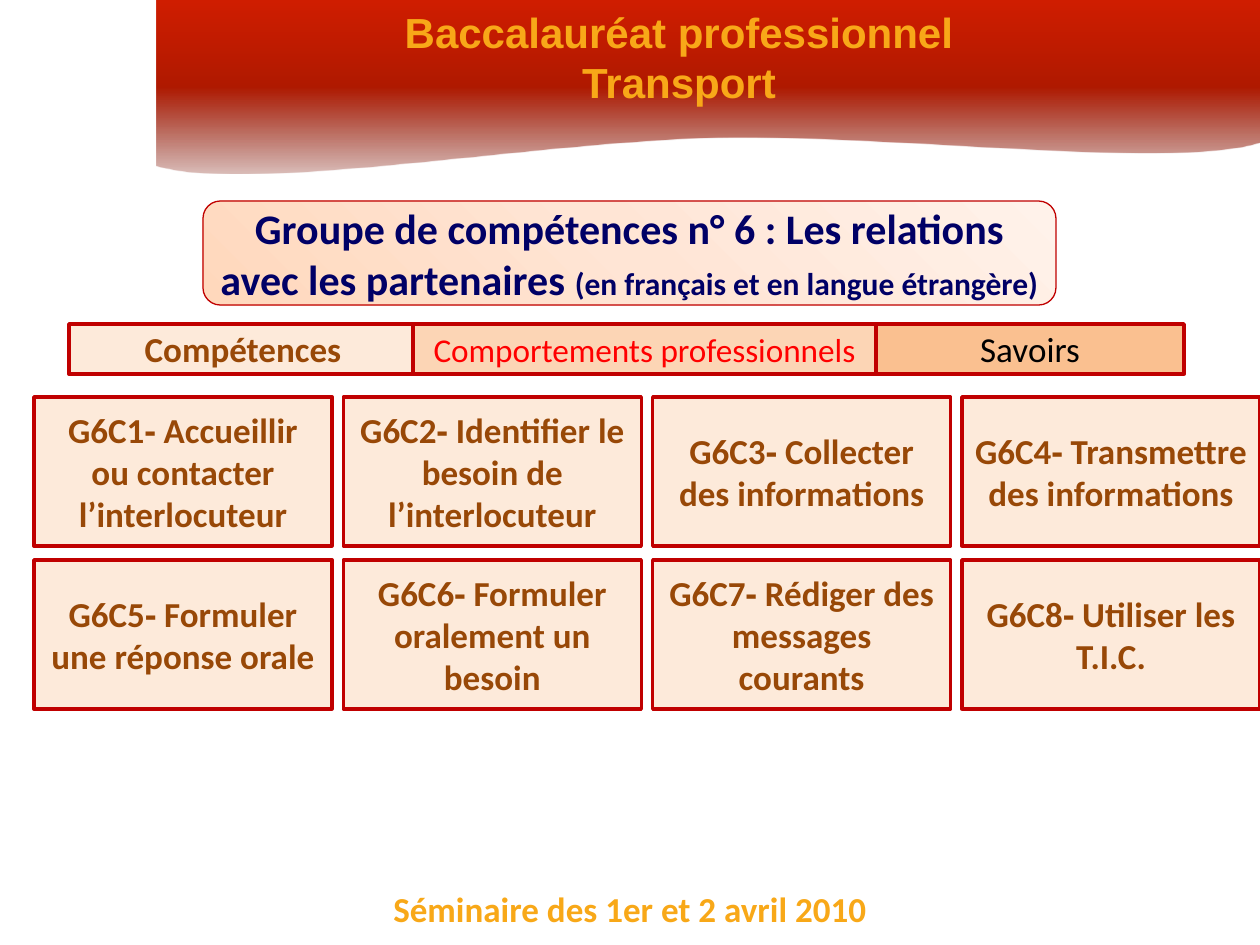
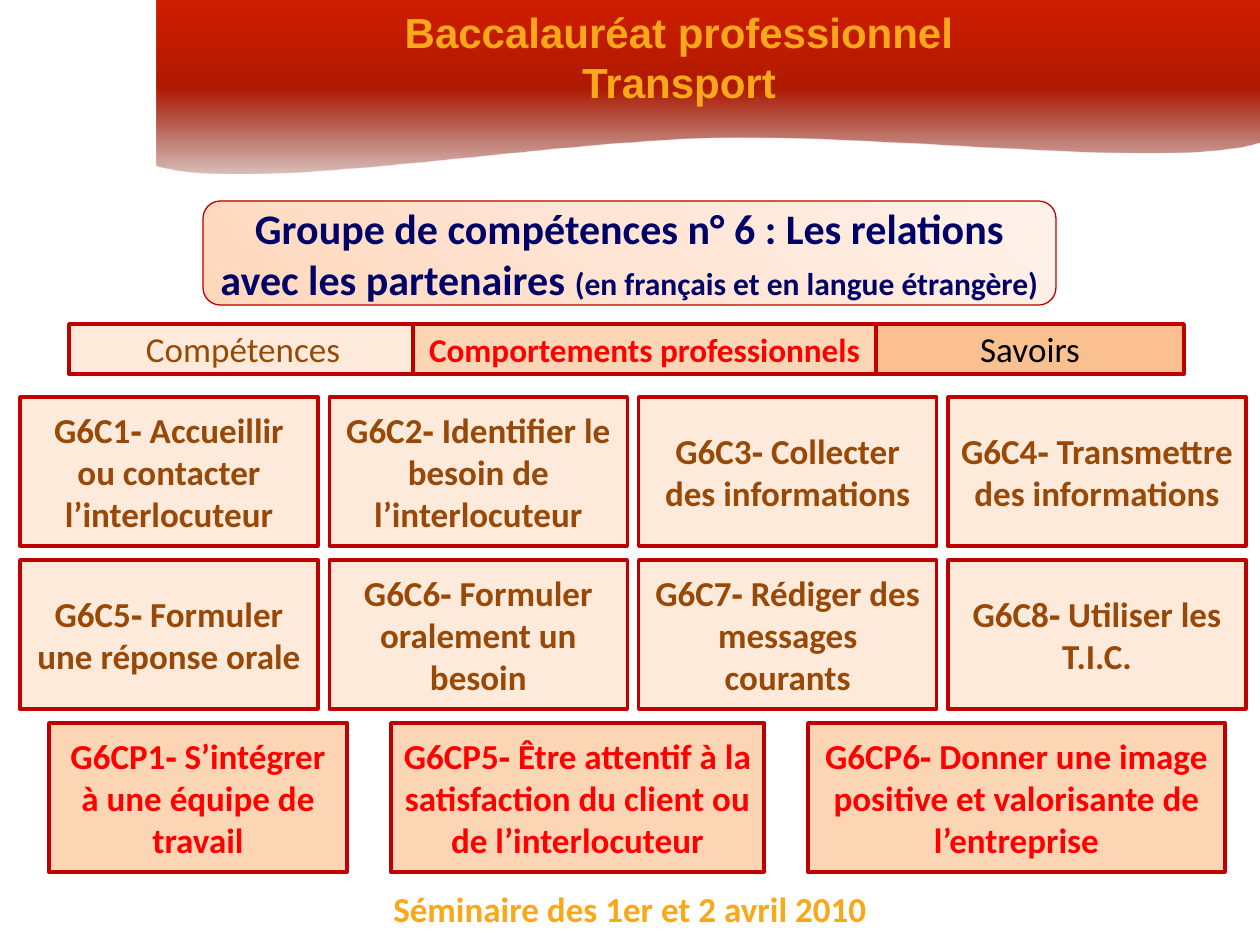
from lxml import etree
from pptx import Presentation
from pptx import util as u
from pptx.dml.color import RGBColor
from pptx.enum import shapes, text
from pptx.oxml import ns

SCALE = 914400 / 126
CARD_WIDTH, CARD_HEIGHT, ROW_PITCH = 298, 149, 163

ORANGE = RGBColor(0xF8, 0xA8, 0x18)
CRIMSON = RGBColor(0xC0, 0x00, 0x00)
RED = RGBColor(0xFF, 0x00, 0x00)
BROWN = RGBColor(0x98, 0x48, 0x07)
NAVY = RGBColor(0x00, 0x00, 0x66)
BLACK = RGBColor(0x00, 0x00, 0x00)
PALE_PEACH = RGBColor(0xFD, 0xEA, 0xDA)
PEACH = RGBColor(0xFC, 0xD5, 0xB5)
APRICOT = RGBColor(0xFA, 0xC0, 0x90)
BAND_STOPS = [
    (0, RGBColor(0x7B, 0x11, 0x00), 27),
    (50, RGBColor(0xAF, 0x19, 0x00), 100),
    (100, RGBColor(0xD0, 0x1D, 0x00), 100),
]
GROUP_STOPS = [
    (0, RGBColor(0xFF, 0xD8, 0xBC), 100),
    (50, RGBColor(0xFF, 0xE5, 0xD5), 100),
    (100, RGBColor(0xFF, 0xF2, 0xEA), 100),
]
UPWARD = '<a:lin ang="16200000" scaled="0"/>'
FROM_BOTTOM_LEFT = '<a:path path="circle"><a:fillToRect t="100000" r="100000"/></a:path>'

SKILLS = [
    ["G6C1‐ Accueillir ou contacter", "l’interlocuteur"],
    ["G6C2‐ Identifier le besoin de", "l’interlocuteur"],
    ["G6C3‐ Collecter des informations"],
    ["G6C4‐ Transmettre des informations"],
    ["G6C5‐ Formuler une réponse orale"],
    ["G6C6‐ Formuler oralement un besoin"],
    ["G6C7‐ Rédiger des messages", "courants"],
    ["G6C8‐ Utiliser les T.I.C."],
]
BEHAVIOURS = [
    (0, 298, ["G6CP1‐ S’intégrer à une équipe de travail"]),
    (342, 373, ["G6CP5‐ Être attentif à la", "satisfaction du client ou", "de l’interlocuteur"]),
    (759, 417, ["G6CP6‐ Donner une image positive et valorisante de", "l’entreprise"]),
]
TABS = [
    ("Savoirs", 807, 308, APRICOT, BLACK, 20),
    ("Compétences", 0, 348, PALE_PEACH, BROWN, 20),
    ("Comportements professionnels", 344, 463, PEACH, RED, 19),
]


def px(length):
    """Turn pixels into EMU."""
    return u.Emu(round(length * SCALE))


def write(shape, lines, size=20, color=BROWN, bold=True, font="Calibri",
          anchor=text.MSO_ANCHOR.MIDDLE):
    """Write centred lines, each a string or a list of (text, size) runs."""
    frame = shape.text_frame
    frame.word_wrap = True
    frame.vertical_anchor = anchor
    for number, line in enumerate(lines):
        paragraph = frame.add_paragraph() if number else frame.paragraphs[0]
        paragraph.alignment = text.PP_ALIGN.CENTER
        for words, points in [(line, size)] if isinstance(line, str) else line:
            run = paragraph.add_run()
            run.text = words
            run.font.name, run.font.size, run.font.bold = font, u.Pt(points), bold
            run.font.color.rgb = color


def paint_gradient(shape, stops, direction):
    """Fill a shape with a gradient of (percent, colour, opacity) stops."""
    shape.fill.solid()
    marks = "".join(
        f'<a:gs pos="{place * 1000}"><a:srgbClr val="{color}">'
        f'<a:alpha val="{opacity * 1000}"/></a:srgbClr></a:gs>'
        for place, color, opacity in stops)
    gradient = etree.fromstring(
        f'<a:gradFill {ns.nsdecls("a")} rotWithShape="1">'
        f'<a:gsLst>{marks}</a:gsLst>{direction}</a:gradFill>')
    properties = shape.element.spPr
    properties.replace(properties.find(ns.qn("a:solidFill")), gradient)


def add_box(slide, box, fill=None, kind=shapes.MSO_SHAPE.RECTANGLE, weight=2):
    """Add an outlined box with an optional plain fill."""
    shape = slide.shapes.add_shape(kind, *map(px, box))
    shape.shadow.inherit = False
    shape.line.color.rgb = CRIMSON
    shape.line.width = u.Pt(weight)
    if fill is not None:
        shape.fill.solid()
        shape.fill.fore_color.rgb = fill
    return shape


def add_caption(slide, box, lines, **style):
    """Add orange text that stands at the top of its box."""
    caption = slide.shapes.add_textbox(*map(px, box))
    write(caption, lines, color=ORANGE, anchor=text.MSO_ANCHOR.TOP, **style)


def curve(start, pull, push, end, steps=30):
    """Return points along a cubic curve, without its start."""
    fractions = [step / steps for step in range(1, steps + 1)]
    return [
        tuple((1 - t) ** 3 * a + 3 * (1 - t) ** 2 * t * b + 3 * (1 - t) * t ** 2 * c + t ** 3 * d
              for a, b, c, d in zip(start, pull, push, end))
        for t in fractions]


def add_band(slide, left, top, width):
    """Draw the red band with its wavy lower edge."""
    right, crest, foot = (width, 142), (561, 137), (0, 165)
    wave = curve(right, (1014, 169), (745, 134), crest)
    wave += curve(crest, (377, 141), (94, 193), foot)
    outline = slide.shapes.build_freeform(0, 0, scale=1.0)
    outline.add_line_segments([(px(x), px(y)) for x, y in [(width, 0), right] + wave])
    band = outline.convert_to_shape(px(left), px(top))
    band.shadow.inherit = False
    band.line.fill.background()
    paint_gradient(band, BAND_STOPS, UPWARD)


def add_frame(slide):
    """Add the footer, the band and the title that every slide shares."""
    add_caption(slide, (315, 881, 630, 55), ["Séminaire des 1er et 2 avril 2010"])
    add_band(slide, 157, 0, 1103)
    add_caption(slide, (364, 0, 630, 115), ["Baccalauréat professionnel", "Transport"],
                size=24, font="Arial")


def add_skills(slide, left, top, width, columns=4):
    """Lay the skill cards out in a grid as wide as its box."""
    pitch = (width - CARD_WIDTH) / (columns - 1)
    for number, lines in enumerate(SKILLS):
        row, column = divmod(number, columns)
        box = (left + column * pitch, top + row * ROW_PITCH, CARD_WIDTH, CARD_HEIGHT)
        write(add_box(slide, box, PALE_PEACH), lines)


def add_behaviours(slide, left, top):
    """Lay the behaviour cards out in a row."""
    for offset, width, lines in BEHAVIOURS:
        card = add_box(slide, (left + offset, top, width, CARD_HEIGHT), PEACH)
        write(card, lines, color=RED)


def add_group(slide, box):
    """Add the rounded heading of the skill group."""
    heading = add_box(slide, box, kind=shapes.MSO_SHAPE.ROUNDED_RECTANGLE, weight=0.75)
    paint_gradient(heading, GROUP_STOPS, FROM_BOTTOM_LEFT)
    write(heading, [[
        ("Groupe de compétences n° 6 : Les relations avec les partenaires ", 24),
        ("(en français et en langue étrangère)", 18)]], color=NAVY)


def add_tabs(slide, left, top, height, active):
    """Add the three section tabs, the active one in bold."""
    for label, offset, width, fill, color, size in TABS:
        tab = add_box(slide, (left + offset, top, width, height), fill,
                      shapes.MSO_SHAPE.FLOWCHART_PROCESS)
        write(tab, [label], size=size, color=color, bold=label == active)


def add_group_slide(deck, active, skills_left, with_behaviours=False):
    """Build one slide of the skill group."""
    slide = deck.slides.add_slide(deck.slide_layouts[6])
    add_frame(slide)
    add_skills(slide, skills_left, 397, 1226)
    if with_behaviours:
        add_behaviours(slide, 49, 397 + 2 * ROW_PITCH)
    add_group(slide, (203, 201, 853, 104))
    add_tabs(slide, 69, 324, 50, active)


def main():
    """Build the deck and save it."""
    deck = Presentation()
    deck.slide_width, deck.slide_height = px(1260), px(945)
    add_group_slide(deck, "Compétences", 34)
    add_group_slide(deck, "Comportements professionnels", 20, with_behaviours=True)
    deck.save("out.pptx")


if __name__ == "__main__":
    main()
